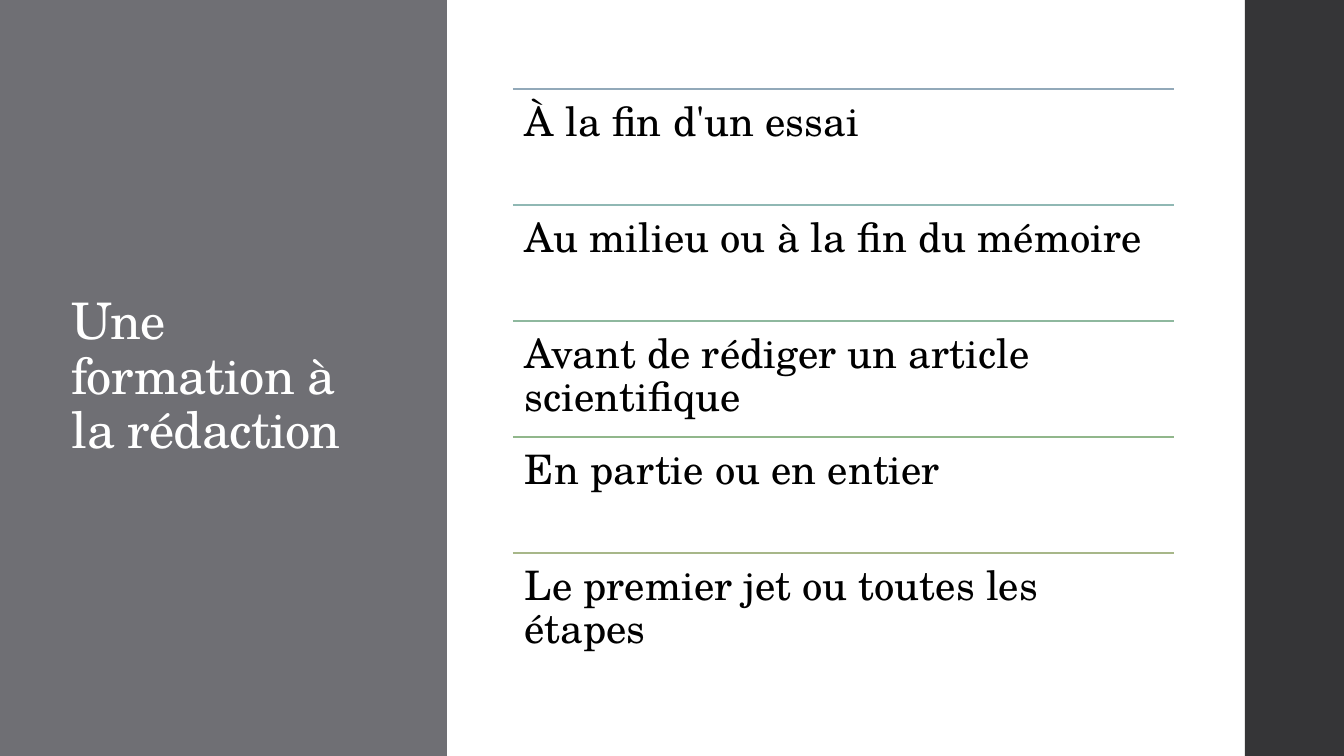
import pptx
import pptx.util
import pptx.dml.color
import pptx.enum.shapes
import pptx.enum.text
import pptx.oxml.ns
import lxml.etree

RGB = pptx.dml.color.RGBColor
WHITE = RGB(0xFF, 0xFF, 0xFF)
BLACK = RGB(0x00, 0x00, 0x00)
PANEL_GREY = RGB(0x6F, 0x6F, 0x74)
STRIPE_GREY = RGB(0x35, 0x35, 0x37)
ROW_BLUE = RGB(0x92, 0xA9, 0xB9)
ROW_TEAL = RGB(0x90, 0xB8, 0xB4)
ROW_SEA = RGB(0x8E, 0xB8, 0x9E)
ROW_GREEN = RGB(0x91, 0xB7, 0x8B)
ROW_OLIVE = RGB(0xA7, 0xB7, 0x89)

TITLE = "Une formation à la rédaction"
ROWS = [
    ("À la fin d'un essai", ROW_BLUE),
    ("Au milieu ou à la fin du mémoire", ROW_TEAL),
    ("Avant de rédiger un article scientifique", ROW_SEA),
    ("En partie ou en entier", ROW_GREEN),
    ("Le premier jet ou toutes les étapes", ROW_OLIVE),
]
PANELS = [
    ((0, 0, 447, 756), PANEL_GREY),
    ((1245, 0, 99, 756), STRIPE_GREY),
]
TITLE_AREA = (62, 92, 299, 572)
ROW_LEFT, ROW_TOP, ROW_WIDTH, ROW_HEIGHT = 513, 89, 661, 116

FONT = "TeX Gyre Schola"
TITLE_FONT = {"name": FONT, "size": pptx.util.Pt(36)}
ROW_FONT = {"name": FONT, "size": pptx.util.Pt(29)}
TITLE_INSET, ROW_INSET = (10, 5), (12, 12)


def px(length):
    return pptx.util.Inches(length / 100.8)


def add_panel(page, area, color):
    panel = page.shapes.add_shape(
        pptx.enum.shapes.MSO_SHAPE.RECTANGLE, *map(px, area))
    panel.shadow.inherit = False
    panel.fill.solid()
    panel.fill.fore_color.rgb = color
    panel.line.fill.background()


def add_text(page, area, text, font, color, inset, anchor):
    box = page.shapes.add_textbox(*map(px, area))
    across, down = map(px, inset)
    frame_format = {
        "word_wrap": True, "vertical_anchor": anchor,
        "margin_left": across, "margin_right": across,
        "margin_top": down, "margin_bottom": down,
    }
    for name, value in frame_format.items():
        setattr(box.text_frame, name, value)
    para = box.text_frame.paragraphs[0]
    para.line_spacing = 0.9
    span = para.add_run()
    span.text = text
    for name, value in font.items():
        setattr(span.font, name, value)
    span.font.color.rgb = color
    return span


def add_rule(page, left, top, width, color):
    rule = page.shapes.add_connector(
        pptx.enum.shapes.MSO_CONNECTOR.STRAIGHT,
        px(left), px(top), px(left + width), px(top))
    rule.line.color.rgb = color
    rule.line.width = pptx.util.Pt(1.1)
    lxml.etree.SubElement(
        rule._element.spPr, pptx.oxml.ns.qn("a:effectLst"))


def main():
    deck = pptx.Presentation()
    deck.slide_width, deck.slide_height = px(1344), px(756)
    page = deck.slides.add_slide(deck.slide_layouts[6])
    anchors = pptx.enum.text.MSO_ANCHOR

    for area, color in PANELS:
        add_panel(page, area, color)
    title = add_text(page, TITLE_AREA, TITLE, TITLE_FONT, WHITE,
                     TITLE_INSET, anchors.MIDDLE)
    title.font._element.set("spc", "-50")

    for index, (text, color) in enumerate(ROWS):
        top = ROW_TOP + index * ROW_HEIGHT
        add_rule(page, ROW_LEFT, top, ROW_WIDTH, color)
        add_text(page, (ROW_LEFT, top, ROW_WIDTH, ROW_HEIGHT), text,
                 ROW_FONT, BLACK, ROW_INSET, anchors.TOP)

    deck.save("out.pptx")


if __name__ == "__main__":
    main()
